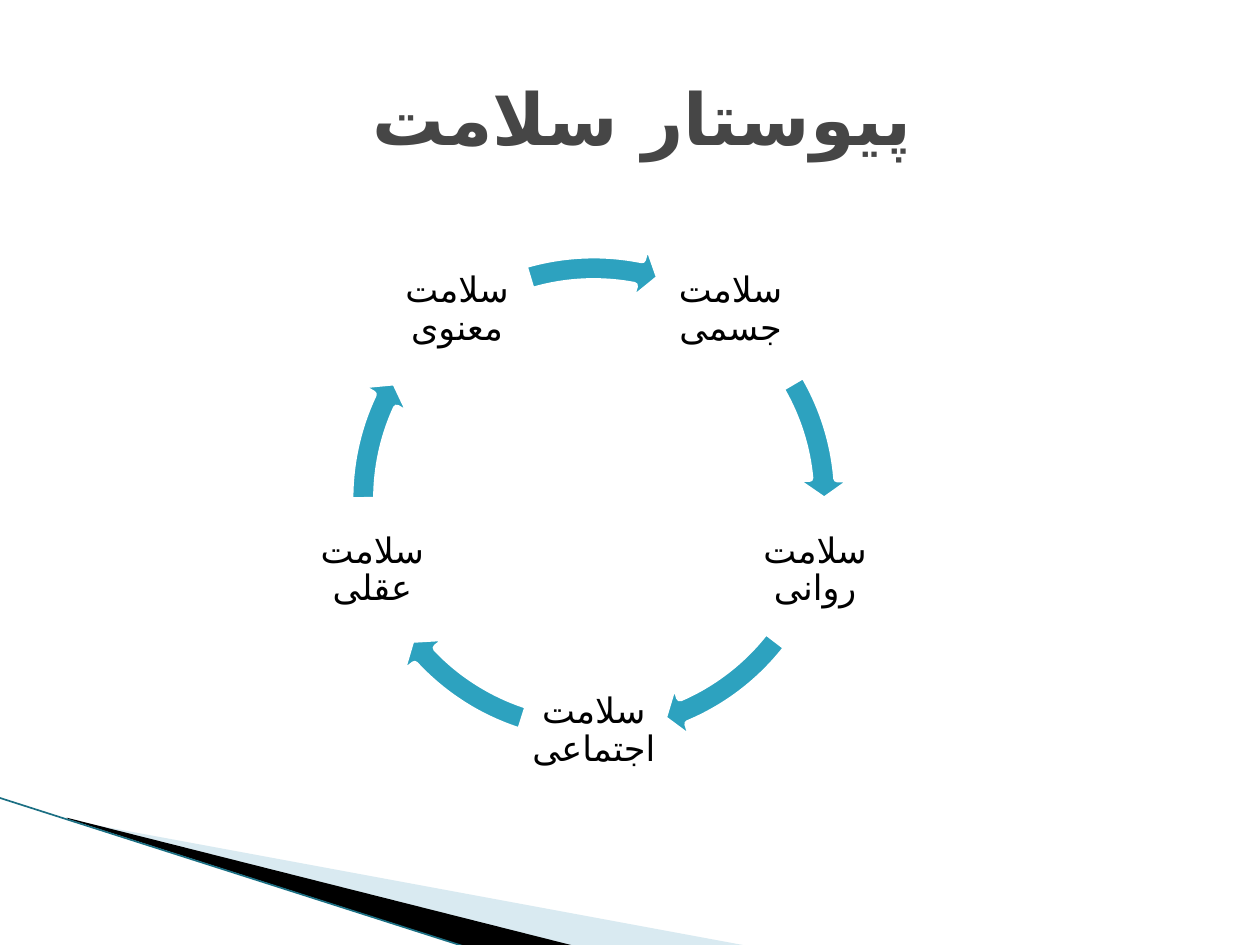
from math import cos, radians, sin

from lxml import etree
from pptx import Presentation
from pptx.dml.color import RGBColor
from pptx.enum.shapes import MSO_CONNECTOR, MSO_SHAPE
from pptx.enum.text import MSO_ANCHOR, PP_ALIGN
from pptx.oxml.ns import qn
from pptx.util import Pt

STRAIGHT = MSO_CONNECTOR.STRAIGHT
CIRCULAR_ARROW = MSO_SHAPE.CIRCULAR_ARROW
MIDDLE = MSO_ANCHOR.MIDDLE
CENTER = PP_ALIGN.CENTER

WHITE = RGBColor(0xFF, 0xFF, 0xFF)
BLACK = RGBColor(0, 0, 0)
GRAY = RGBColor(0x46, 0x46, 0x46)
TEAL = RGBColor(0x2D, 0xA2, 0xBF)
PALE_BLUE = RGBColor(0xA0, 0xCB, 0xDC)
DARK_TEAL = RGBColor(0x1B, 0x6F, 0x83)
FONT = "Noto Sans Mono"
ARABIC_FONT = "DejaVu Sans"

deck = Presentation()
deck.slide_width, deck.slide_height = Pt(720), Pt(540)
page = deck.slides.add_slide(deck.slide_layouts[6])


def add_text(text, left, top, width, height, size, color, bold, margins, spacing):
    box = page.shapes.add_textbox(Pt(left), Pt(top), Pt(width), Pt(height))
    frame = box.text_frame
    frame_format = {"word_wrap": True, "vertical_anchor": MIDDLE, **margins}
    for name, value in frame_format.items():
        setattr(frame, name, value)
    para = frame.paragraphs[0]
    for name, value in {"alignment": CENTER, **spacing}.items():
        setattr(para, name, value)
    para._p.get_or_add_pPr().set("rtl", "1")
    span = para.add_run()
    span.text = text
    for name, value in {"name": FONT, "size": Pt(size), "bold": bold}.items():
        setattr(span.font, name, value)
    span.font.color.rgb = color
    etree.SubElement(span._r.get_or_add_rPr(), qn("a:cs"), typeface=ARABIC_FONT)


wedges = [
    (PALE_BLUE, 40, [(39.6, 468.72), (428.4, 540.72), (328.32, 540.72), (39.6, 468)]),
    (BLACK, 100, [(38.16, 467.28), (329.04, 540.72), (267.84, 541.44), (38.88, 468)]),
]
for color, opacity, points in wedges:
    corners = [(Pt(x), Pt(y)) for x, y in points]
    builder = page.shapes.build_freeform(*corners[0])
    builder.add_line_segments(corners[1:])
    wedge = builder.convert_to_shape()
    wedge.shadow.inherit = False
    wedge.fill.solid()
    wedge.fill.fore_color.rgb = color
    wedge.line.fill.background()
    if opacity < 100:
        fill_color = wedge._element.spPr.find(qn("a:solidFill"))[0]
        etree.SubElement(fill_color, qn("a:alpha"), val=str(opacity * 1000))

edge = page.shapes.add_connector(STRAIGHT, Pt(-0.72), Pt(455.76), Pt(267.12), Pt(541.44))
edge.line.color.rgb = DARK_TEAL
edge.line.width = Pt(0.95)
etree.SubElement(edge._element.spPr, qn("a:effectLst"))

add_text("پیوستار سلامت ", 36, 21.6, 648, 90, 41, GRAY, True, {}, {})

center_x, center_y, radius = 339.3, 285, 133
label_size, ring_size = 80, 300
label_margins = {f"margin_{side}": Pt(2.2) for side in ("left", "top", "right", "bottom")}
label_spacing = {"line_spacing": 0.9, "space_after": Pt(7)}
stages = [
    ("سلامت جسمی", 212.953, 197.645),
    ("سلامت روانی", 40.168, 22.515),
    ("سلامت اجتماعی", 82.131, 64.478),
    ("سلامت عقلی", 123.001, 107.693),
    ("سلامت معنوی", 168.678, 151.968),
]
for index, (label, arrow_end, arrow_start) in enumerate(stages):
    angle = radians(-54 + 72 * index)
    left = center_x + radius * cos(angle) - label_size / 2
    top = center_y + radius * sin(angle) - label_size / 2
    add_text(label, left, top, label_size, label_size, 20, BLACK, False,
             label_margins, label_spacing)
    arrow = page.shapes.add_shape(
        CIRCULAR_ARROW, Pt(center_x - ring_size / 2), Pt(center_y - ring_size / 2),
        Pt(ring_size), Pt(ring_size))
    arrow.shadow.inherit = False
    for position, value in enumerate((0.052, 3.354, arrow_end, arrow_start, 0.061)):
        arrow.adjustments[position] = value
    arrow.fill.solid()
    arrow.fill.fore_color.rgb = TEAL
    arrow.line.color.rgb = WHITE
    arrow.line.width = Pt(4.33)

deck.save("out.pptx")
